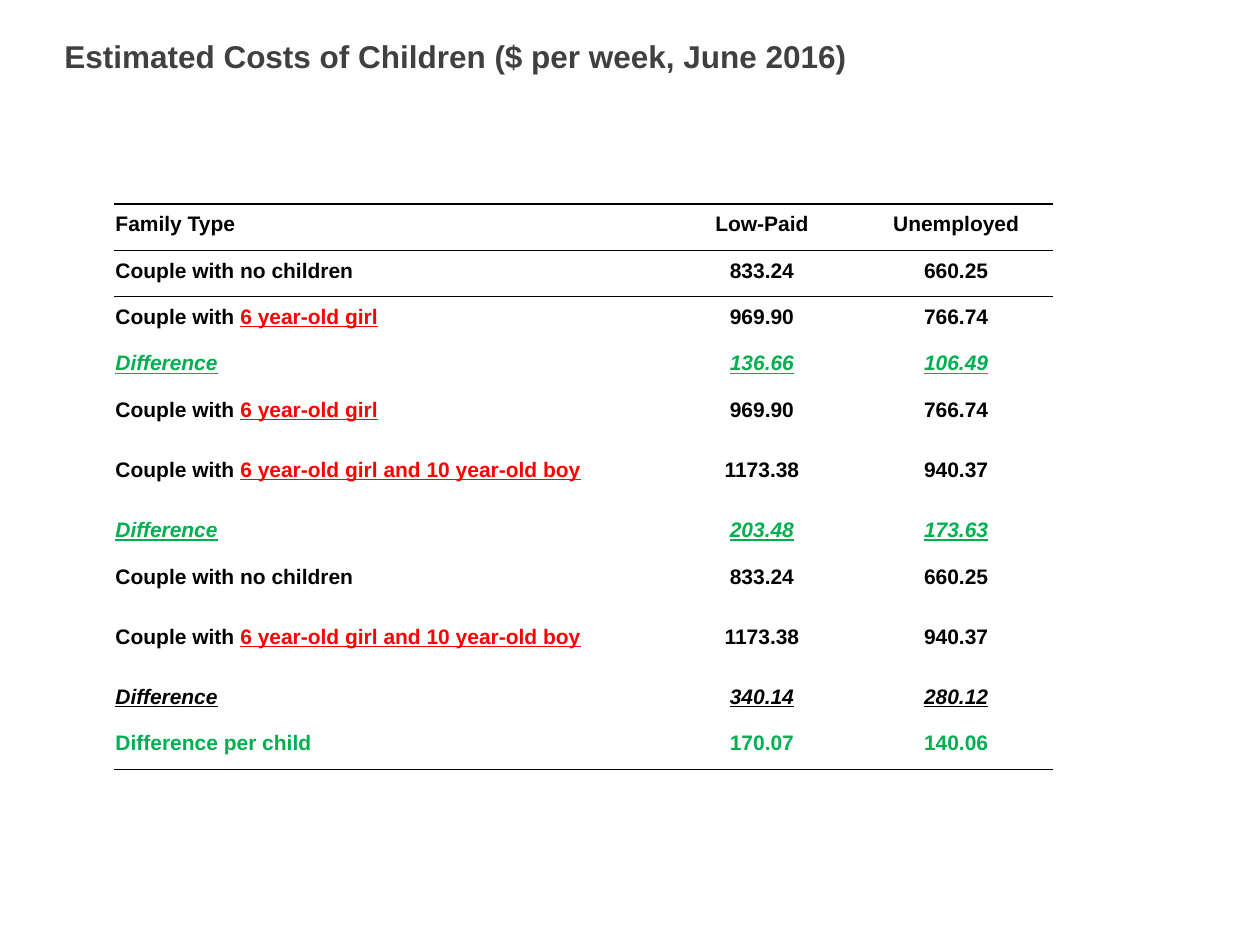
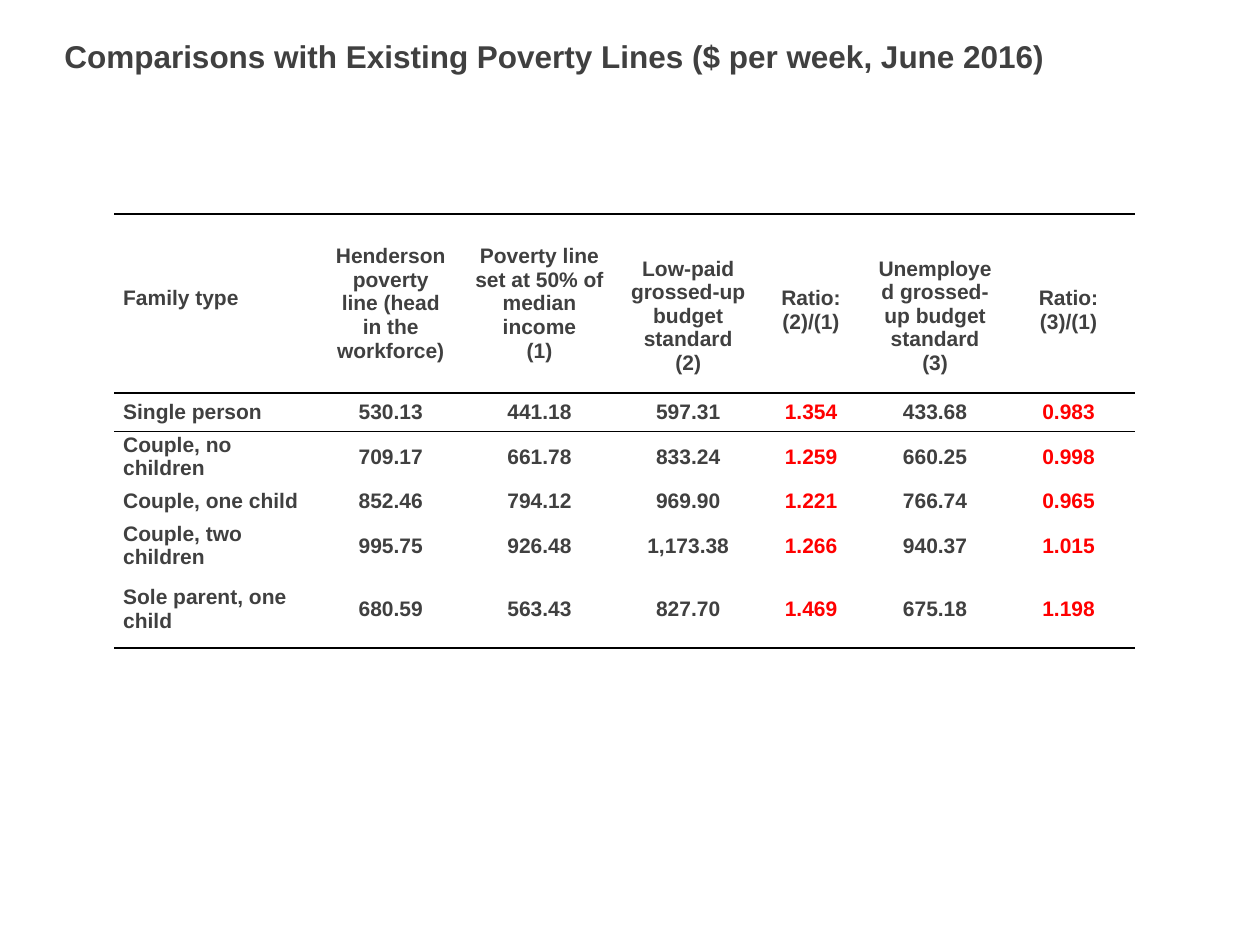
"""Build two slides of tables on the weekly costs of children and poverty lines."""
from dataclasses import dataclass

from lxml import etree
from pptx import Presentation
from pptx.dml.color import RGBColor
from pptx.enum.text import MSO_ANCHOR, MSO_AUTO_SIZE, PP_ALIGN
from pptx.oxml.ns import qn
from pptx.util import Pt

LEFT, CENTER = PP_ALIGN.LEFT, PP_ALIGN.CENTER
TOP, MIDDLE = MSO_ANCHOR.TOP, MSO_ANCHOR.MIDDLE
GROW = MSO_AUTO_SIZE.SHAPE_TO_FIT_TEXT
PLAIN_STYLE = "{2D5ABB26-0587-4C30-8999-92F81FD0307C}"


@dataclass(frozen=True)
class Theme:
    font: str = "Arial"
    title_size: float = 18
    body_size: float = 12
    line_pitch: float = 13.8
    rule: float = 1
    grey: str = "404040"
    black: str = "000000"
    red: str = "FF0000"
    green: str = "00B050"


T = Theme()
SLIDE_SIZE = (720, 540)
TITLE_BOX = (36.8, 21, 646.5, 21.6)

COSTS_TITLE = "Estimated Costs of Children ($ per week, June 2016)"
COSTS_AT = (65.3, 116.6)
COSTS_COLS = (314.6, 111, 111)
COSTS_MARGINS = (0.7, 0.7, 0.7, 3.6)
COSTS_ROW, COSTS_TALL_ROW = 26.45, 42.5
GIRL = "6 year-old girl"
GIRL_AND_BOY = "6 year-old girl and 10 year-old boy"
PLAIN = dict(color=T.black)
CHILDREN = dict(color=T.red, underline=True)
GAP = dict(color=T.green, italic=True, underline=True)
TOTAL_GAP = dict(color=T.black, italic=True, underline=True)
PER_CHILD = dict(color=T.green)
COSTS = [
    ("Family Type", "", "Low-Paid", "Unemployed", PLAIN),
    ("Couple with no children", "", "833.24", "660.25", PLAIN),
    ("Couple with ", GIRL, "969.90", "766.74", PLAIN),
    ("Difference", "", "136.66", "106.49", GAP),
    ("Couple with ", GIRL, "969.90", "766.74", PLAIN),
    ("Couple with ", GIRL_AND_BOY, "1173.38", "940.37", PLAIN),
    ("Difference", "", "203.48", "173.63", GAP),
    ("Couple with no children", "", "833.24", "660.25", PLAIN),
    ("Couple with ", GIRL_AND_BOY, "1173.38", "940.37", PLAIN),
    ("Difference", "", "340.14", "280.12", TOTAL_GAP),
    ("Difference per child", "", "170.07", "140.06", PER_CHILD),
]

LINES_TITLE = "Comparisons with Existing Poverty Lines ($ per week, June 2016)"
LINES_AT = (65.3, 122.4)
LINES_COLS = (120.2, 75.6, 94.4, 75.6, 64.8, 77, 75.6)
LINES_MARGINS = (5.1, 0, 5.1, 0)
LINES_ROWS = (102.2, 22, 22, 22, 22, 44)
RATIO_COLS = (4, 6)
HEADER_LAYOUT = [(3, TOP), (0, MIDDLE), (0, MIDDLE), (1, MIDDLE),
                 (3, TOP), (1, MIDDLE), (3, TOP)]
POVERTY_LINES = [
    ("Family type", "Henderson poverty line (head in the workforce)",
     "Poverty line set at 50% of median income\n(1)",
     "Low-paid grossed-up budget standard\n(2)", "Ratio:\n(2)/(1)",
     "Unemployed grossed-up budget standard\n(3)", "Ratio:\n(3)/(1)"),
    ("Single person", "530.13", "441.18", "597.31", "1.354", "433.68", "0.983"),
    ("Couple, no children", "709.17", "661.78", "833.24", "1.259", "660.25", "0.998"),
    ("Couple, one child", "852.46", "794.12", "969.90", "1.221", "766.74", "0.965"),
    ("Couple, two children", "995.75", "926.48", "1,173.38", "1.266", "940.37", "1.015"),
    ("Sole parent, one child", "680.59", "563.43", "827.70", "1.469", "675.18", "1.198"),
]


def write(p, text, color=T.grey, size=T.body_size, align=LEFT, italic=False, underline=False):
    p.alignment = align
    r = p.add_run()
    r.text = text
    r.font.name, r.font.size, r.font.bold = T.font, Pt(size), True
    r.font.italic, r.font.underline = italic, underline
    r.font.color.rgb = RGBColor.from_string(color)


def add_titled_slide(prs, title):
    s = prs.slides.add_slide(prs.slide_layouts[5])
    sp = s.shapes.title
    sp.left, sp.top, sp.width, sp.height = map(Pt, TITLE_BOX)
    tf = sp.text_frame
    tf.margin_left = tf.margin_top = tf.margin_right = tf.margin_bottom = 0
    tf.word_wrap, tf.auto_size, tf.vertical_anchor = True, GROW, MIDDLE
    write(tf.paragraphs[0], title, size=T.title_size)
    return s


def add_rule(cell, edge):
    ln = etree.SubElement(cell._tc.get_or_add_tcPr(), qn(f"a:ln{edge}"), w=str(Pt(T.rule)))
    fill = etree.SubElement(ln, qn("a:solidFill"))
    etree.SubElement(fill, qn("a:srgbClr"), val=T.black)


def add_ruled_table(s, at, cols, rows, margins):
    frame = s.shapes.add_table(len(rows), len(cols), *map(Pt, (*at, sum(cols), sum(rows))))
    table = frame.table
    table.first_row = table.horz_banding = False
    table._tbl.tblPr.find(qn("a:tableStyleId")).text = PLAIN_STYLE
    for column, width in zip(table.columns, cols):
        column.width = Pt(width)
    for i, (row, height) in enumerate(zip(table.rows, rows)):
        row.height = Pt(height)
        for cell in row.cells:
            cell.margin_left, cell.margin_top, cell.margin_right, cell.margin_bottom = map(Pt, margins)
            cell.vertical_anchor = MIDDLE
            if i in (0, 1):
                add_rule(cell, "T")
            if i in (0, len(rows) - 1):
                add_rule(cell, "B")
            cell.fill.background()
    return table


def build_costs(prs):
    s = add_titled_slide(prs, COSTS_TITLE)
    heights = [COSTS_TALL_ROW if row[1] == GIRL_AND_BOY else COSTS_ROW for row in COSTS]
    table = add_ruled_table(s, COSTS_AT, COSTS_COLS, heights, COSTS_MARGINS)
    for i, (family, children, *amounts, style) in enumerate(COSTS):
        p = table.cell(i, 0).text_frame.paragraphs[0]
        write(p, family, **style)
        if children:
            write(p, children, **CHILDREN)
        for j, amount in enumerate(amounts, 1):
            write(table.cell(i, j).text_frame.paragraphs[0], amount, align=CENTER, **style)


def build_poverty_lines(prs):
    s = add_titled_slide(prs, LINES_TITLE)
    table = add_ruled_table(s, LINES_AT, LINES_COLS, LINES_ROWS, LINES_MARGINS)
    for i, row in enumerate(POVERTY_LINES):
        for j, text in enumerate(row):
            cell = table.cell(i, j)
            tf = cell.text_frame
            for k, line in enumerate(text.split("\n")):
                p = tf.add_paragraph() if k else tf.paragraphs[0]
                write(p, line, color=T.red if i and j in RATIO_COLS else T.grey,
                      align=CENTER if j else LEFT)
    for j, (lines_down, anchor) in enumerate(HEADER_LAYOUT):
        cell = table.cell(0, j)
        cell.margin_top, cell.vertical_anchor = Pt(lines_down * T.line_pitch), anchor


def main():
    prs = Presentation()
    prs.slide_width, prs.slide_height = map(Pt, SLIDE_SIZE)
    build_costs(prs)
    build_poverty_lines(prs)
    prs.save("out.pptx")


if __name__ == "__main__":
    main()
